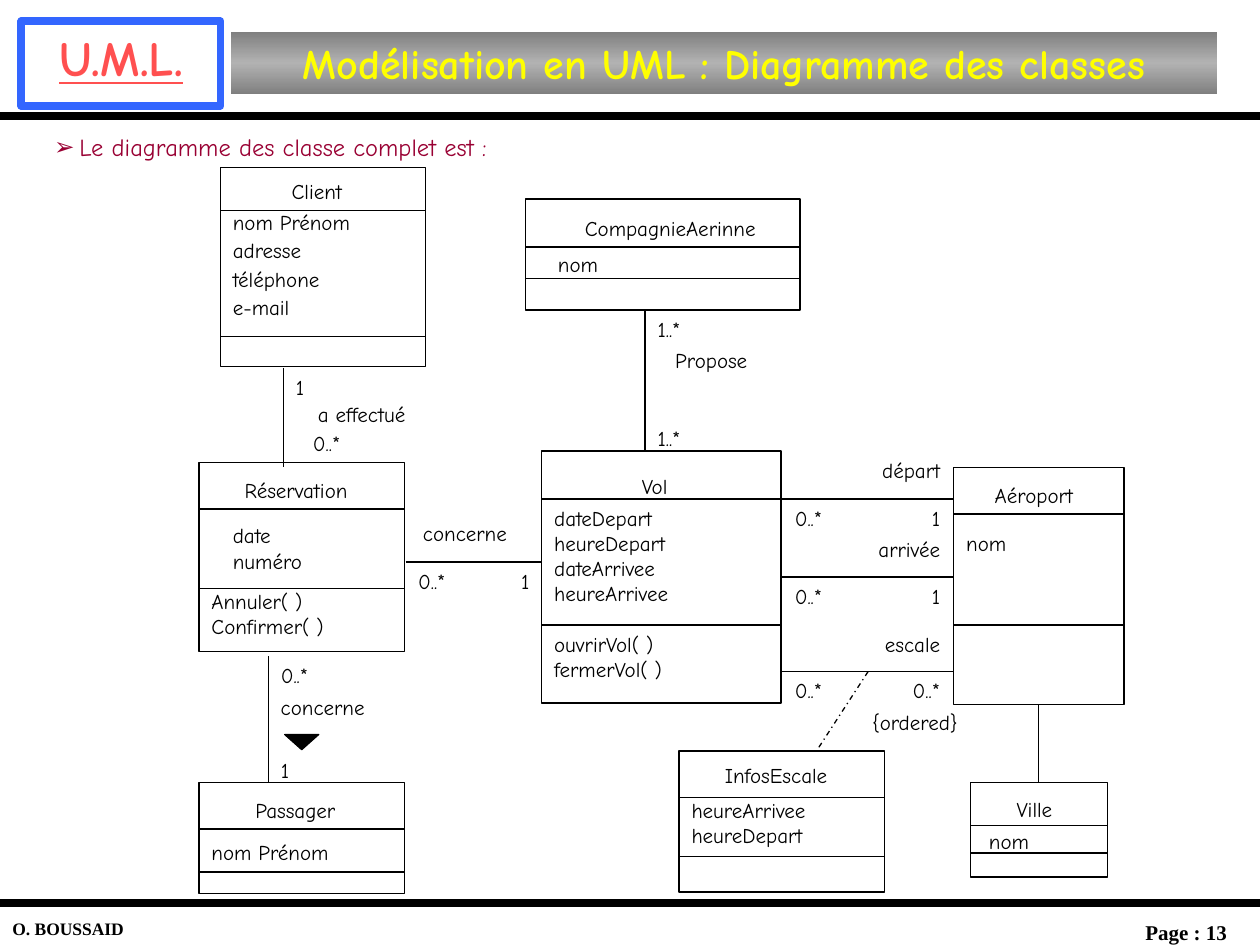
import copy
from dataclasses import dataclass

import pptx
import pptx.dml.color
import pptx.enum.dml
import pptx.enum.shapes
import pptx.enum.text
import pptx.oxml
import pptx.oxml.ns
import pptx.util

Inches, Pt = pptx.util.Inches, pptx.util.Pt
RGB = pptx.dml.color.RGBColor.from_string
qn = pptx.oxml.ns.qn
Shape = pptx.enum.shapes.MSO_SHAPE
Align = pptx.enum.text.PP_ALIGN
Anchor = pptx.enum.text.MSO_ANCHOR
LEFT, CENTER, RIGHT = Align.LEFT, Align.CENTER, Align.RIGHT


@dataclass
class Theme:
    ink: str = "000000"
    paper: str = "FFFFFF"
    logo: str = "FF5050"
    frame: str = "3366FF"
    title: str = "FFFF00"
    lead: str = "990033"
    band: tuple = ("7F7F7F", "B2B2B2", "7F7F7F")
    thin: float = 0.75
    thick: float = 4.5


theme = Theme()
LABEL = {"name": "Comic Neue", "size": Pt(12), "bold": False}
LOGO = {"name": "Comic Neue", "size": Pt(28), "bold": True, "underline": True}
TITLE = {"name": "Comic Neue", "size": Pt(24), "bold": True}
LEAD = {"name": "Comic Neue", "size": Pt(14), "bold": False}
AUTHOR = {"name": "Times New Roman", "size": Pt(10), "bold": True}
NUMBER = {"name": "Times New Roman", "size": Pt(12), "bold": True}

deck = pptx.Presentation()
deck.slide_width, deck.slide_height = Inches(10), Inches(7.5)
page = deck.slides.add_slide(deck.slide_layouts[1])


def write(box, lines, align=LEFT, style=LABEL, color=theme.ink, inset=0.05, spacing=None):
    """Fill a shape with one paragraph per line; spacing tightens the lines."""
    frame = box.text_frame
    frame.word_wrap = True
    frame.auto_size = pptx.enum.text.MSO_AUTO_SIZE.NONE
    frame.vertical_anchor = Anchor.TOP
    frame.margin_top = Inches(inset)
    for index, line in enumerate(lines):
        para = frame.paragraphs[0] if index == 0 else frame.add_paragraph()
        para.alignment = align
        if spacing:
            para.line_spacing = spacing
            para.space_before = Pt(6 if index else 0)
        span = para.add_run()
        span.text = line
        for name, value in style.items():
            setattr(span.font, name, value)
        span.font.color.rgb = RGB(color)


def connect(x1, y1, x2, y2, weight=theme.thin):
    line = page.shapes.add_connector(
        pptx.enum.shapes.MSO_CONNECTOR.STRAIGHT, Inches(x1), Inches(y1), Inches(x2), Inches(y2))
    line.line.color.rgb = RGB(theme.ink)
    line.line.width = Pt(weight)
    pptx.oxml.ns  # namespace helpers come from here
    line._element.spPr.append(pptx.oxml.parse_xml(
        '<a:effectLst xmlns:a="http://schemas.openxmlformats.org/drawingml/2006/main"/>'))
    return line


# Title band
title = page.shapes.title
title.left, title.top, title.width, title.height = map(Inches, (1.83, 0.25, 7.83, 0.5))
write(title, ["Modélisation en UML : Diagramme des classes"], CENTER, TITLE, theme.title)
title.text_frame.vertical_anchor = Anchor.MIDDLE
title.fill.gradient()
title.fill.gradient_angle = 90
stops = title._element.spPr.find(qn("a:gradFill")).find(qn("a:gsLst"))
stops.append(copy.deepcopy(stops[-1]))
for stop, position, color in zip(title.fill.gradient_stops, (0, 0.5, 1), theme.band):
    stop.position = position
    stop.color.rgb = RGB(color)

# Lead sentence
lead = page.placeholders[1]
lead.left, lead.top, lead.width, lead.height = map(Inches, (0.33, 1, 9.25, 0.33))
write(lead, ["Le diagramme des classe complet est :"], LEFT, LEAD, theme.lead)
lead.text_frame.paragraphs[0].space_before = Pt(0)
properties = lead.text_frame.paragraphs[0]._p.get_or_add_pPr()
properties.set("marL", str(Inches(0.2)))
properties.set("indent", str(Inches(-0.2)))
bullet = pptx.oxml.parse_xml(
    '<a:buChar xmlns:a="http://schemas.openxmlformats.org/drawingml/2006/main" char="➢"/>')
properties.append(bullet)

# Corner mark, rules and footer
corner = page.shapes.add_shape(Shape.RECTANGLE, *map(Inches, (0.17, 0.17, 1.58, 0.67)))
corner.shadow.inherit = False
corner.fill.background()
corner.line.color.rgb = RGB(theme.frame)
corner.line.width = Pt(theme.thick)
write(corner, ["U.M.L."], CENTER, LOGO, theme.logo)
for y in (0.92, 7.17):
    connect(0, y, 10, y, theme.thick)
for text, left, top, align, style in (("O. BOUSSAID", 0, 7.24, LEFT, AUTHOR),
                                      ("Page : 13", 8.83, 7.25, CENTER, NUMBER)):
    box = page.shapes.add_textbox(*map(Inches, (left, top, 1.17, 0.25)))
    write(box, [text], align, style)

# Classes: name, outline, dividers, name box,
# compartments as (lines, box, top inset, line spacing)
classes = [
    ("Client", (1.75, 1.33, 1.63, 1.58), (1.67, 2.67), (1.75, 1.42, 1.53, 0.25),
     [(["nom Prénom", "adresse", "téléphone", "e-mail"], (1.75, 1.67, 1.5, 0.97), 0.05, 0.7)]),
    ("CompagnieAerinne", (4.17, 1.58, 2.18, 0.88), (1.96, 2.21), (4.3, 1.71, 2.04, 0.25),
     [(["nom"], (4.33, 2, 0.92, 0.24), 0.05, 0.7)]),
    ("Réservation", (1.58, 3.67, 1.63, 1.5), (4.04, 4.67), (1.72, 3.79, 1.26, 0.25),
     [(["date", "numéro"], (1.75, 4.17, 1.33, 0.44), 0.05, 0.6),
      (["Annuler( )", "Confirmer( )"], (1.58, 4.67, 1.5, 0.38), 0, None)]),
    ("Vol", (4.3, 3.58, 1.9, 2), (3.96, 4.96), (4.44, 3.76, 1.51, 0.42),
     [(["dateDepart", "heureDepart", "dateArrivee", "heureArrivee"],
       (4.3, 3.96, 1.9, 1), 0.05, None),
      (["ouvrirVol( )", "fermerVol( )"], (4.3, 4.96, 2.04, 0.86), 0.05, None)]),
    ("Aéroport", (7.57, 3.71, 1.35, 1.88), (4.08, 4.96), (7.57, 3.83, 1.27, 0.25),
     [(["nom"], (7.57, 4.21, 1.16, 0.38), 0, None)]),
    ("Passager", (1.58, 6.21, 1.63, 0.88), (6.58, 6.92), (1.58, 6.33, 1.53, 0.25),
     [(["nom Prénom"], (1.58, 6.67, 1.5, 0.24), 0.05, 0.7)]),
    ("InfosEscale", (5.39, 5.96, 1.63, 1.12), (6.33, 6.8), (5.53, 6.05, 1.26, 0.38),
     [(["heureArrivee", "heureDepart"], (5.39, 6.33, 1.5, 0.47), 0, None)]),
    ("Ville", (7.7, 6.21, 1.09, 0.75), (6.55, 6.77), (7.78, 6.32, 0.86, 0.23),
     [(["nom"], (7.75, 6.58, 0.92, 0.24), 0.05, 0.7)]),
]
outlines = {}
for name, outline, dividers, name_box, compartments in classes:
    rect = page.shapes.add_shape(Shape.RECTANGLE, *map(Inches, outline))
    rect.shadow.inherit = False
    rect.fill.solid()
    rect.fill.fore_color.rgb = RGB(theme.paper)
    rect.line.color.rgb = RGB(theme.ink)
    rect.line.width = Pt(theme.thin)
    outlines[name] = rect
    left, top, width, height = outline
    for y in dividers:
        connect(left, y, left + width, y)
    write(page.shapes.add_textbox(*map(Inches, name_box)), [name], CENTER, inset=0)
    for lines, place, inset, spacing in compartments:
        box = page.shapes.add_textbox(*map(Inches, place))
        write(box, lines, inset=inset, spacing=spacing)

# Associations
for ends in ((2.25, 2.92, 2.25, 3.71), (5.12, 2.46, 5.12, 3.58), (3.22, 4.46, 4.3, 4.46),
             (2.13, 5.21, 2.13, 6.21), (6.21, 3.96, 7.57, 3.96), (6.21, 5.33, 7.57, 5.33)):
    connect(*ends)
arrival = connect(6.2, 4.58, 7.57, 4.58)
arrival.begin_connect(outlines["Vol"], 3)
city = connect(8.25, 5.58, 8.25, 6.21)
city.begin_connect(outlines["Aéroport"], 2)
city.end_connect(outlines["Ville"], 0)
stopover = connect(6.89, 5.33, 6.48, 5.96)
stopover.line.dash_style = pptx.enum.dml.MSO_LINE.DASH_DOT

arrow = page.shapes.add_shape(Shape.ISOSCELES_TRIANGLE, *map(Inches, (2.26, 5.83, 0.27, 0.12)))
arrow.shadow.inherit = False
arrow._element.spPr.find(qn("a:xfrm")).set("flipV", "1")
arrow.fill.solid()
arrow.fill.fore_color.rgb = RGB(theme.ink)
arrow.line.color.rgb = RGB(theme.ink)
arrow.line.width = Pt(theme.thin)

# Roles and multiplicities
labels = [
    ("1", 2.25, 2.92, 0.55, LEFT), ("a effectué", 2.25, 3.14, 1.24, CENTER),
    ("0..*", 2.25, 3.37, 0.55, RIGHT), ("1..*", 5.12, 2.46, 0.82, LEFT),
    ("Propose", 5.26, 2.71, 0.95, LEFT), ("1..*", 5.12, 3.33, 0.82, LEFT),
    ("concerne", 3.08, 4.08, 1.22, CENTER), ("0..*", 3.22, 4.46, 0.54, LEFT),
    ("1", 3.76, 4.46, 0.54, RIGHT), ("0..*", 2.13, 5.21, 0.68, LEFT),
    ("concerne", 2.13, 5.46, 1.23, LEFT), ("1", 2.13, 5.96, 0.55, LEFT),
    ("{ordered}", 6.48, 5.58, 1.22, RIGHT),
]
for role, role_top, line_y, far_end in (("départ", 3.58, 3.96, "1"), ("arrivée", 4.21, 4.58, "1"),
                                        ("escale", 4.96, 5.33, "0..*")):
    labels += [(role, 6.34, role_top, 1.22, RIGHT), ("0..*", 6.21, line_y, 0.54, LEFT),
               (far_end, 7.02, line_y, 0.54, RIGHT)]
for text, left, top, width, align in labels:
    write(page.shapes.add_textbox(*map(Inches, (left, top, width, 0.38))), [text], align)

deck.save("out.pptx")
